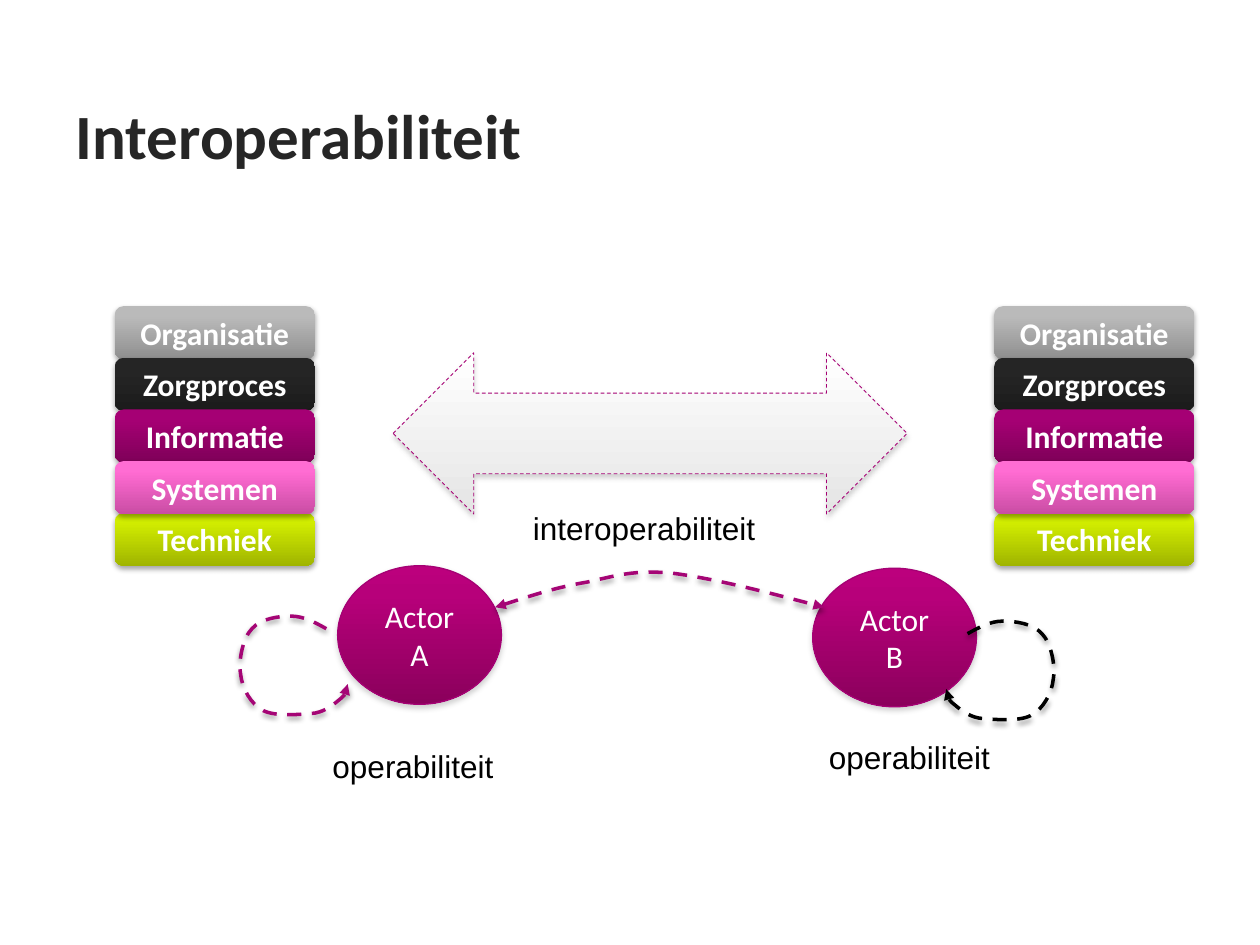
import pptx
import pptx.dml.color
import pptx.enum.dml
import pptx.enum.shapes
import pptx.enum.text
import pptx.oxml
import pptx.oxml.ns
import pptx.util
from lxml import etree

Inches = pptx.util.Inches
RGBColor = pptx.dml.color.RGBColor
Shape = pptx.enum.shapes.MSO_SHAPE
Align = pptx.enum.text.PP_ALIGN
Anchor = pptx.enum.text.MSO_ANCHOR
Dash = pptx.enum.dml.MSO_LINE
qn = pptx.oxml.ns.qn

WHITE = RGBColor(0xFF, 0xFF, 0xFF)
BLACK = RGBColor(0, 0, 0)
GRAY = RGBColor(0x80, 0x80, 0x80)
DARK = RGBColor(0x26, 0x26, 0x26)
PURPLE = RGBColor(0xA5, 0x01, 0x74)
CURVE_PURPLE = RGBColor(0xA5, 0x05, 0x75)

# Gradients run from top to bottom: (position in percent, colour).
ARROW_GRADIENT = ((0, WHITE), (100, RGBColor(0xE5, 0xE5, 0xE5)))
ACTOR_GRADIENT = ((0, RGBColor(0xBC, 0x00, 0x7D)), (20, RGBColor(0xB7, 0x00, 0x7A)),
                  (100, RGBColor(0x8B, 0x00, 0x5C)))

# Row, name, top colour, upper colour, bottom colour; the last one lies in front.
LAYERS = (
    (0, "Organisatie", RGBColor(0xBA, 0xBA, 0xBA), RGBColor(0xB9, 0xB9, 0xB9), RGBColor(0x8F, 0x8F, 0x8F)),
    (1, "Zorgproces", RGBColor(0x25, 0x25, 0x25), RGBColor(0x25, 0x25, 0x25), RGBColor(0x1C, 0x1C, 0x1C)),
    (2, "Informatie", RGBColor(0xA5, 0x00, 0x74), RGBColor(0xA5, 0x00, 0x73), RGBColor(0x7F, 0x00, 0x59)),
    (4, "Techniek", RGBColor(0xD1, 0xED, 0x00), RGBColor(0xD0, 0xEB, 0x00), RGBColor(0xA0, 0xB5, 0x00)),
    (3, "Systemen", RGBColor(0xFF, 0x6D, 0xD3), RGBColor(0xFF, 0x6B, 0xD2), RGBColor(0xCA, 0x4D, 0xA4)),
)
LAYER_PITCH = 0.41

# Start point, then two control points and an end point for each segment.
LOOP = (
    (2.59, 4.99), (2.5, 4.94), (2.41, 4.89), (2.31, 4.89),
    (2.21, 4.89), (2.07, 4.91), (2, 4.99),
    (1.93, 5.06), (1.89, 5.24), (1.91, 5.35),
    (1.92, 5.46), (1.99, 5.59), (2.09, 5.64),
    (2.19, 5.69), (2.39, 5.67), (2.5, 5.66),
    (2.6, 5.64), (2.66, 5.58), (2.71, 5.54),
    (2.75, 5.5), (2.76, 5.47), (2.76, 5.43),
)
MIRRORED_LOOP = tuple((10.27 - x, y + 0.04) for x, y in LOOP)
BRIDGE = (
    (3.93, 4.82), (4.18, 4.74), (4.42, 4.66), (4.66, 4.62),
    (4.89, 4.57), (5.03, 4.52), (5.34, 4.55),
    (5.65, 4.59), (6.09, 4.7), (6.54, 4.82),
)


def write_text(shape, text, size=18, font="Calibri", color=WHITE, bold=False,
               align=Align.CENTER, anchor=Anchor.MIDDLE):
    frame = shape.text_frame
    frame.word_wrap = True
    frame.vertical_anchor = anchor
    paragraph = frame.paragraphs[0]
    paragraph.text = text
    paragraph.alignment = align
    paragraph.font.size = pptx.util.Pt(size)
    paragraph.font.name = font
    paragraph.font.bold = bold
    paragraph.font.color.rgb = color


def set_shadow(shape, color=GRAY, opacity=35):
    shape.shadow.inherit = False
    effects = shape._element.spPr.find(qn("a:effectLst"))
    shadow = etree.SubElement(effects, qn("a:outerShdw"), blurRad=str(pptx.util.Pt(3.1)),
                              dist=str(pptx.util.Pt(1.8)), dir="5400000", rotWithShape="0")
    shade = etree.SubElement(shadow, qn("a:srgbClr"), val=str(color))
    etree.SubElement(shade, qn("a:alpha"), val=str(opacity * 1000))


def set_gradient(shape, stops):
    shape.fill.gradient()
    shape.fill.gradient_angle = 270
    stop_list = shape._element.spPr.find(qn("a:gradFill")).find(qn("a:gsLst"))
    for old_stop in list(stop_list):
        stop_list.remove(old_stop)
    for position, color in stops:
        stop = etree.SubElement(stop_list, qn("a:gs"), pos=str(position * 1000))
        etree.SubElement(stop, qn("a:srgbClr"), val=str(color))


def set_line(shape, color, width, dash=None):
    shape.line.color.rgb = color
    shape.line.width = pptx.util.Pt(width)
    if dash:
        shape.line.dash_style = dash


def add_gradient_shape(slide, kind, box, stops, shadow_color=GRAY):
    shape = slide.shapes.add_shape(kind, *map(Inches, box))
    set_gradient(shape, stops)
    set_shadow(shape, shadow_color)
    return shape


def add_actor(slide, text, left, top):
    actor = add_gradient_shape(slide, Shape.OVAL, (left, top, 1.3, 1.1), ACTOR_GRADIENT)
    set_line(actor, PURPLE, 0.75)
    write_text(actor, text)


def add_curve(slide, points, color=CURVE_PURPLE, ends=("tailEnd",)):
    """Draw a dashed cubic curve with arrowheads at the named ends."""
    start, *rest = [(Inches(x), Inches(y)) for x, y in points]
    builder = slide.shapes.build_freeform(*start)
    builder.add_line_segments(rest, close=False)
    curve = builder.convert_to_shape()
    segments = list(curve._element.spPr.iter(qn("a:lnTo")))
    outline = segments[0].getparent()
    for index in range(0, len(segments), 3):
        cubic = etree.SubElement(outline, qn("a:cubicBezTo"))
        for segment in segments[index:index + 3]:
            cubic.append(segment[0])
            outline.remove(segment)
    curve.fill.background()
    set_line(curve, color, 2, Dash.DASH)
    for end in ends:
        etree.SubElement(curve.line._get_or_add_ln(), qn("a:" + end), type="triangle")
    set_shadow(curve, BLACK, 38)


def add_label(slide, text, left, top, width=1.75):
    label = slide.shapes.add_textbox(*map(Inches, (left, top, width, 0.4)))
    write_text(label, text, font="Arial", color=BLACK, align=Align.LEFT, anchor=Anchor.TOP)


def add_layer_stack(slide, left):
    for row, name, top_color, upper_color, bottom_color in LAYERS:
        stops = ((0, top_color), (20, upper_color), (100, bottom_color))
        box = (left, 2.43 + row * LAYER_PITCH, 1.59, 0.42)
        layer = add_gradient_shape(slide, Shape.ROUNDED_RECTANGLE, box, stops, BLACK)
        layer.line.fill.background()
        write_text(layer, name, bold=True)


def add_title(slide, text):
    title = slide.shapes.title
    title.left, title.top, title.width, title.height = map(Inches, (0.5, 0.44, 9, 1.25))
    write_text(title, text, size=36, color=DARK, bold=True, align=Align.LEFT)


def main():
    presentation = pptx.Presentation()
    presentation.slide_width, presentation.slide_height = Inches(10), Inches(7.5)
    slide = presentation.slides.add_slide(presentation.slide_layouts[5])
    add_title(slide, "Interoperabiliteit")
    add_actor(slide, "Actor A", 2.68, 4.49)
    add_actor(slide, "Actor B", 6.45, 4.51)
    add_curve(slide, LOOP)
    add_curve(slide, MIRRORED_LOOP, color=BLACK)
    add_curve(slide, BRIDGE, ends=("headEnd", "tailEnd"))
    add_label(slide, "operabiliteit", 2.54, 5.88)
    add_label(slide, "operabiliteit", 6.48, 5.81)
    arrow = add_gradient_shape(slide, Shape.LEFT_RIGHT_ARROW, (3.12, 2.8, 4.08, 1.28), ARROW_GRADIENT)
    set_line(arrow, PURPLE, 0.5, Dash.DASH)
    add_label(slide, "interoperabiliteit", 4.13, 3.99, width=2.05)
    for left in (0.91, 7.89):
        add_layer_stack(slide, left)
    presentation.save("out.pptx")


if __name__ == "__main__":
    main()
